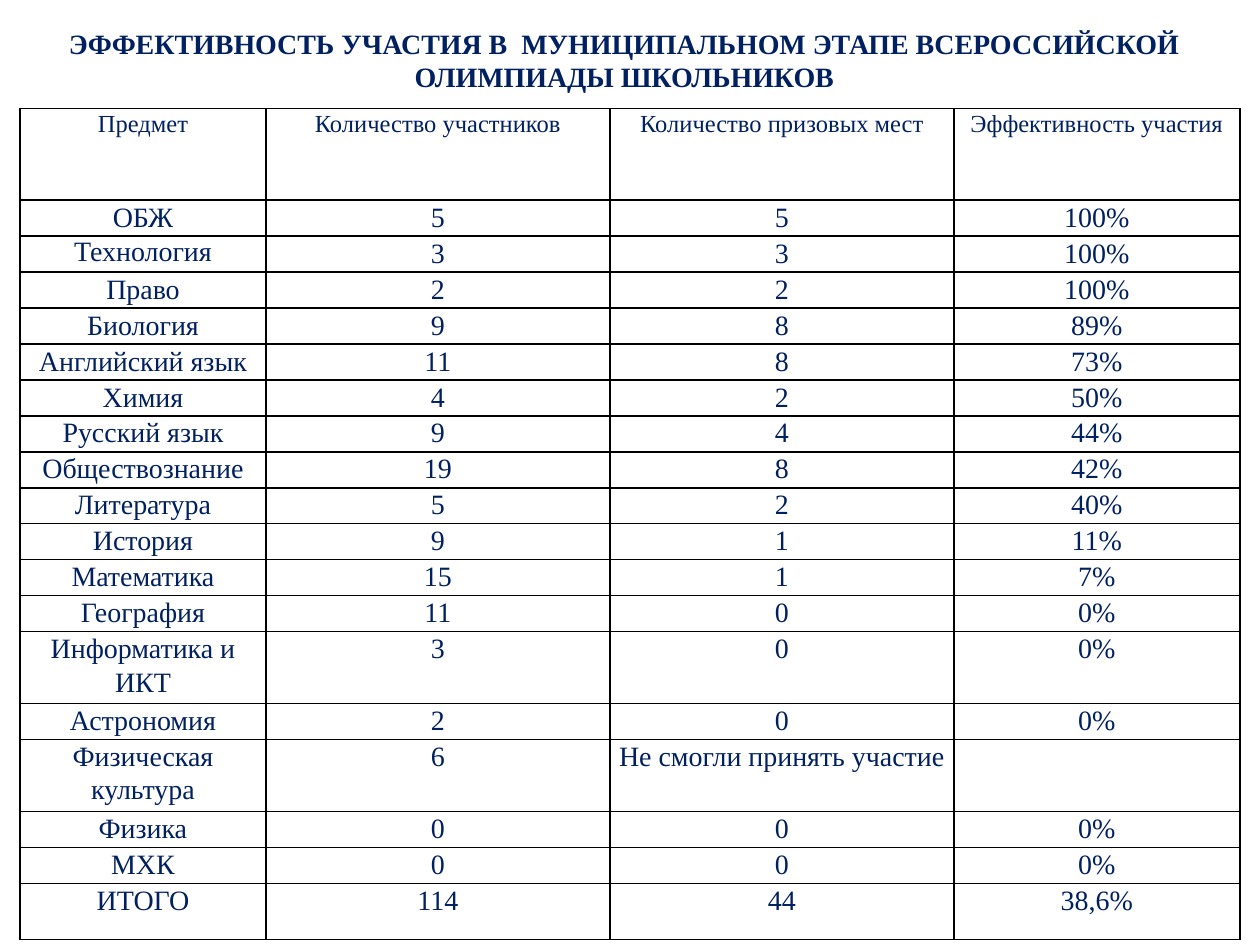
from dataclasses import dataclass

from lxml.etree import SubElement
from pptx import Presentation
from pptx.dml.color import RGBColor
from pptx.enum.text import MSO_AUTO_SIZE, PP_ALIGN
from pptx.oxml.ns import qn
from pptx.util import Inches, Pt


@dataclass(frozen=True)
class Theme:
    font: str = "Times New Roman"
    ink: str = "002060"
    border: str = "000000"
    border_width: float = 1
    body_size: float = 16
    header_size: float = 14
    line_spacing: float = 1.07


@dataclass(frozen=True)
class Result:
    subject: str
    participants: str
    prizes: str
    efficiency: str
    height: float = 1  # in row units
    size: float = 16
    subject_spacing: float = 1.07

    def cells(self) -> tuple:
        return self.subject, self.participants, self.prizes, self.efficiency


THEME = Theme()
SLIDE_WIDTH, SLIDE_HEIGHT = 10, 7.5
ROW_UNIT = 0.28
COLUMN_WIDTHS = (1.95, 2.73, 2.73, 2.27)
TITLE = ("ЭФФЕКТИВНОСТЬ УЧАСТИЯ В  МУНИЦИПАЛЬНОМ ЭТАПЕ ВСЕРОССИЙСКОЙ "
         "ОЛИМПИАДЫ ШКОЛЬНИКОВ")
RESULTS = (
    Result("Предмет", "Количество участников", "Количество призовых мест",
           "Эффективность участия", height=2.6, size=THEME.header_size),
    Result("ОБЖ", "5", "5", "100%"),
    Result("Технология", "3", "3", "100%", subject_spacing=1),
    Result("Право", "2", "2", "100%"),
    Result("Биология", "9", "8", "89%"),
    Result("Английский язык", "11", "8", "73%"),
    Result("Химия", "4", "2", "50%"),
    Result("Русский язык", "9", "4", "44%"),
    Result("Обществознание", "19", "8", "42%"),
    Result("Литература", "5", "2", "40%"),
    Result("История", "9", "1", "11%"),
    Result("Математика", "15", "1", "7%"),
    Result("География", "11", "0", "0%"),
    Result("Информатика и ИКТ", "3", "0", "0%", height=2),
    Result("Астрономия", "2", "0", "0%"),
    Result("Физическая культура", "6", "Не смогли принять участие", "", height=2),
    Result("Физика", "0", "0", "0%"),
    Result("МХК", "0", "0", "0%"),
    Result("ИТОГО", "114", "44", "38,6%", height=1.6),
)


def apply(target, values: dict) -> None:
    for name, value in values.items():
        setattr(target, name, value)


def write(text_frame, text: str, size: float, spacing: float, bold: bool = False) -> None:
    paragraph = text_frame.paragraphs[0]
    apply(paragraph, {"alignment": PP_ALIGN.CENTER, "line_spacing": spacing})
    # An empty cell keeps its type size on the paragraph
    font = paragraph.add_run().font if text else paragraph.font
    if text:
        paragraph.runs[0].text = text
    apply(font, {"name": THEME.font, "size": Pt(size), "bold": bold})
    font.color.rgb = RGBColor.from_string(THEME.ink)


def draw_borders(cell) -> None:
    properties = cell._tc.get_or_add_tcPr()
    for side in ("a:lnL", "a:lnR", "a:lnT", "a:lnB"):
        line = SubElement(properties, qn(side), w=str(Pt(THEME.border_width)))
        fill = SubElement(line, qn("a:solidFill"))
        SubElement(fill, qn("a:srgbClr"), val=THEME.border)


def draw_title(slide) -> None:
    box = slide.shapes.add_textbox(Inches(0.23), Inches(0.16), Inches(9.45), Inches(0.64))
    apply(box.text_frame, {"word_wrap": True, "auto_size": MSO_AUTO_SIZE.SHAPE_TO_FIT_TEXT})
    write(box.text_frame, TITLE, THEME.body_size, 1, bold=True)


def draw_results(slide) -> None:
    height = ROW_UNIT * sum(result.height for result in RESULTS)
    table = slide.shapes.add_table(
        len(RESULTS), len(COLUMN_WIDTHS), Inches(0.16), Inches(0.86),
        Inches(sum(COLUMN_WIDTHS)), Inches(height)).table
    apply(table, {"first_row": False, "horz_banding": False})
    for column, width in zip(table.columns, COLUMN_WIDTHS):
        column.width = Inches(width)
    margins = {"margin_left": Inches(0.05), "margin_right": Inches(0.05),
               "margin_top": 0, "margin_bottom": 0}
    for row, result in zip(table.rows, RESULTS):
        row.height = Inches(ROW_UNIT * result.height)
        for index, (cell, text) in enumerate(zip(row.cells, result.cells())):
            apply(cell, margins)
            draw_borders(cell)
            cell.fill.background()
            spacing = THEME.line_spacing if index else result.subject_spacing
            write(cell.text_frame, text, result.size, spacing)


def main() -> None:
    presentation = Presentation()
    apply(presentation, {"slide_width": Inches(SLIDE_WIDTH),
                         "slide_height": Inches(SLIDE_HEIGHT)})
    slide = presentation.slides.add_slide(presentation.slide_layouts[6])
    draw_title(slide)
    draw_results(slide)
    presentation.save("out.pptx")


if __name__ == "__main__":
    main()
